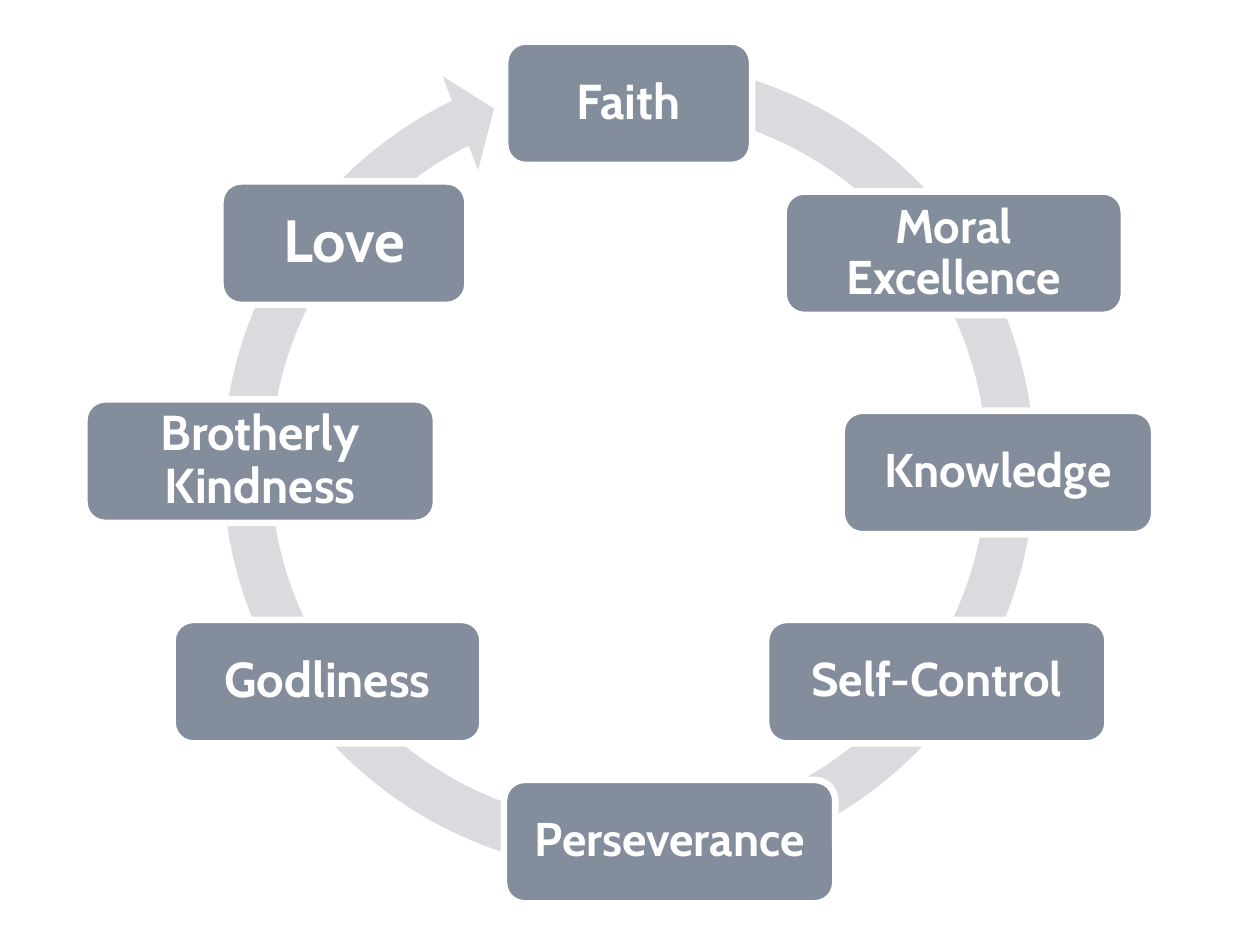
from dataclasses import dataclass

import pptx
import pptx.dml.color
import pptx.enum.shapes
import pptx.enum.text
import pptx.util

SLIDE_WIDTH = pptx.util.Inches(10)
SLIDE_HEIGHT = pptx.util.Inches(7.5)
ARROW_COLOR = "D9DBDE"
STEP_COLOR = "838D9B"
WHITE = "FFFFFF"
STEP_HEIGHT = 13.07  # percent of the slide's height


@dataclass
class Step:
    """A virtue; left and width in percent of slide width, top of its height."""
    label: str
    left: float
    top: float
    width: float
    size: int = 27
    inset: float = 0.11


STEPS = [
    Step("Faith", 40.1, 4.4, 19.6, 28),
    Step("Moral Excellence", 62.2, 20.27, 27),
    Step("Knowledge", 66.8, 43.47, 24.8),
    Step("Self-Control", 60.8, 65.6, 27.1),
    Step("Perseverance", 40, 82.53, 26.3),
    Step("Godliness", 13.7, 65.6, 24.6, 28),
    Step("Brotherly Kindness", 6.7, 42.27, 27.9, 28),
    Step("Love", 17.5, 19.2, 19.6, 34, 0.14),
]


def rgb(color: str) -> pptx.dml.color.RGBColor:
    return pptx.dml.color.RGBColor.from_string(color)


def add_filled_shape(slide, kind, left: float, top: float, width: float,
                     height: float, color: str):
    """Add a flat shape placed in percent of the slide's size."""
    shape = slide.shapes.add_shape(
        kind,
        round(SLIDE_WIDTH * left / 100), round(SLIDE_HEIGHT * top / 100),
        round(SLIDE_WIDTH * width / 100), round(SLIDE_HEIGHT * height / 100))
    shape.shadow.inherit = False
    shape.fill.solid()
    shape.fill.fore_color.rgb = rgb(color)
    return shape


def add_cycle_arrow(slide) -> None:
    arrow = add_filled_shape(
        slide, pptx.enum.shapes.MSO_SHAPE.CIRCULAR_ARROW,
        15.6, 3.6, 68.6, 91.47, ARROW_COLOR)
    arrow.line.fill.background()
    for index, value in enumerate((0.055, 3.307, 146.32, 168.84, 0.058)):
        arrow.adjustments[index] = value


def add_step(slide, step: Step) -> None:
    box = add_filled_shape(
        slide, pptx.enum.shapes.MSO_SHAPE.ROUNDED_RECTANGLE,
        step.left, step.top, step.width, STEP_HEIGHT, STEP_COLOR)
    box.line.color.rgb = rgb(WHITE)
    box.line.width = pptx.util.Pt(3.78)

    frame = box.text_frame
    frame.word_wrap = True
    frame.vertical_anchor = pptx.enum.text.MSO_ANCHOR.MIDDLE
    inset = pptx.util.Inches(step.inset)
    frame.margin_left = frame.margin_right = inset
    frame.margin_top = frame.margin_bottom = inset

    paragraph = frame.paragraphs[0]
    paragraph.text = step.label
    paragraph.alignment = pptx.enum.text.PP_ALIGN.CENTER
    paragraph.line_spacing = 0.9
    paragraph.font.name = "Cabin"
    paragraph.font.size = pptx.util.Pt(step.size)
    paragraph.font.bold = True
    paragraph.font.color.rgb = rgb(WHITE)


def main() -> None:
    presentation = pptx.Presentation()
    presentation.slide_width = SLIDE_WIDTH
    presentation.slide_height = SLIDE_HEIGHT
    slide = presentation.slides.add_slide(presentation.slide_layouts[6])
    add_cycle_arrow(slide)
    for step in STEPS:
        add_step(slide, step)
    presentation.save("out.pptx")


if __name__ == "__main__":
    main()
